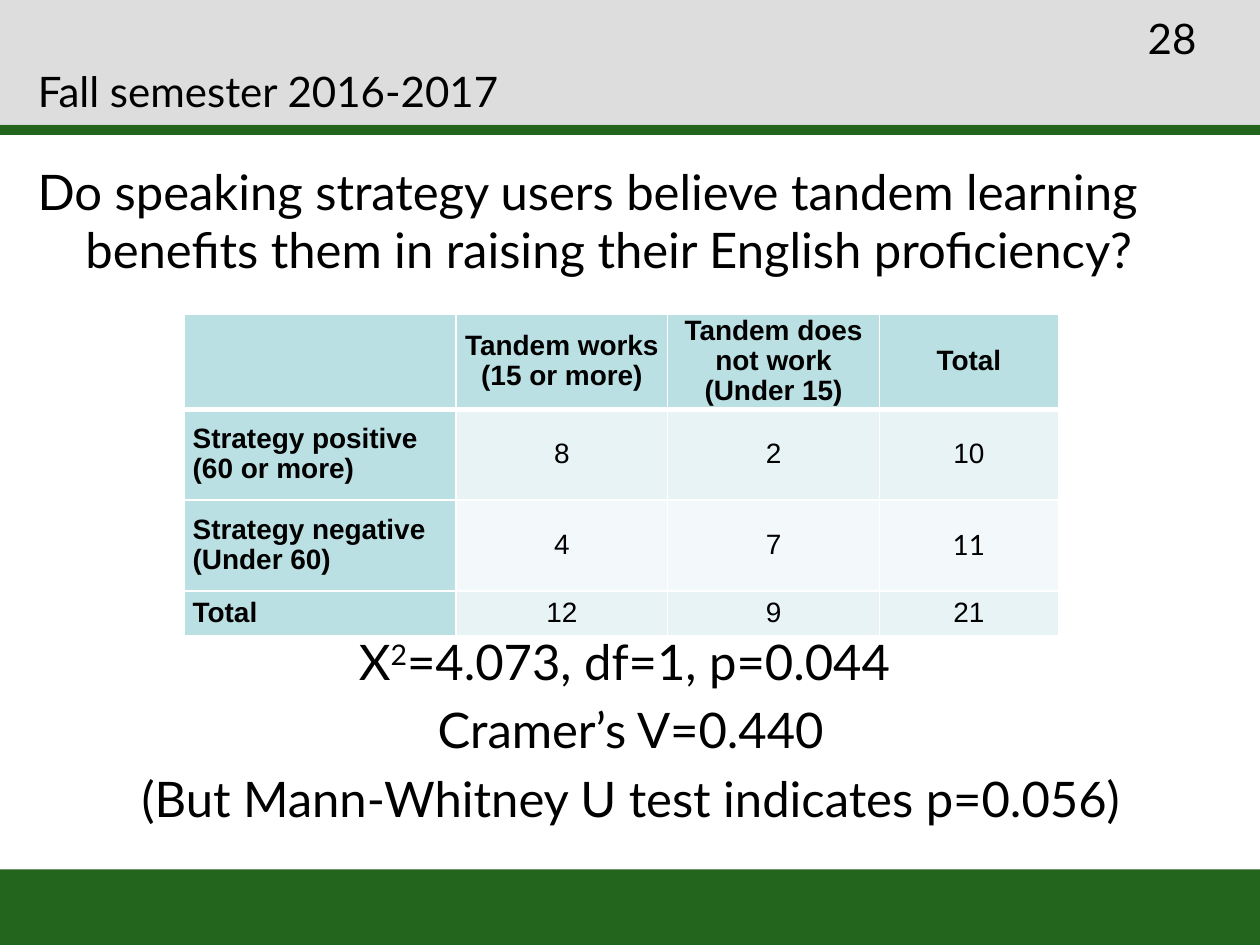
from lxml import etree
from pptx import Presentation
from pptx.dml.color import RGBColor
from pptx.enum import shapes, text
from pptx.oxml import ns
from pptx.util import Inches, Pt

GREEN = RGBColor(0x23, 0x65, 0x1C)
GREY = RGBColor(0xDD, 0xDD, 0xDD)
BLACK = RGBColor(0, 0, 0)
HEADING_FILL = RGBColor(0xBB, 0xE0, 0xE3)
ROW_FILLS = [RGBColor(0xE7, 0xF3, 0xF4), RGBColor(0xF3, 0xF9, 0xFA)]

COLUMN_WIDTHS = [2.16, 1.68, 1.68, 1.42]
ROW_HEIGHTS = [0.72, 0.72, 0.72, 0.36]
RESPONSES = [
    ["", "Tandem works\n(15 or more)", "Tandem does not work\n(Under 15)", "Total"],
    ["Strategy positive\n(60 or more)", "8", "2", "10"],
    ["Strategy negative\n(Under 60)", "4", "7", "11"],
    ["Total", "12", "9", "21"],
]


def style(para, size, name="Lato", bold=False):
    para.font.size = Pt(size)
    para.font.name = name
    para.font.bold = bold
    para.font.color.rgb = BLACK


def add_band(page, top, height, color):
    band = page.shapes.add_shape(
        shapes.MSO_SHAPE.RECTANGLE, 0, Inches(top), Inches(10), Inches(height))
    band.shadow.inherit = False
    band.fill.solid()
    band.fill.fore_color.rgb = color
    band.line.fill.background()


def set_title(page, words):
    title = page.shapes.title
    title.left, title.top = Inches(0.2), Inches(0.44)
    title.width, title.height = Inches(8.27), Inches(0.56)
    frame = title.text_frame
    frame.text = words
    frame.vertical_anchor = text.MSO_ANCHOR.MIDDLE
    frame.auto_size = text.MSO_AUTO_SIZE.NONE
    para = frame.paragraphs[0]
    para.alignment = text.PP_ALIGN.LEFT
    style(para, 24)
    title.element.getparent().append(title.element)


def add_text(page, left, top, width, height, lines, size, align=text.PP_ALIGN.LEFT):
    box = page.shapes.add_textbox(
        Inches(left), Inches(top), Inches(width), Inches(height))
    frame = box.text_frame
    frame.word_wrap = True
    for index, spans in enumerate(lines):
        para = frame.paragraphs[0] if index == 0 else frame.add_paragraph()
        para.alignment = align
        if index:
            para.space_before = Pt(size * 0.2)
        style(para, size)
        for words, raised in spans:
            span = para.add_run()
            span.text = words
            if raised:
                span.font._element.set("baseline", "30000")
    return frame


def hang(para, indent):
    properties = para._p.get_or_add_pPr()
    properties.set("marL", str(Inches(indent)))
    properties.set("indent", str(-Inches(indent)))


def set_borders(cell, top, bottom):
    properties = cell._tc.get_or_add_tcPr()
    for side, width in (("L", 1), ("R", 1), ("T", top), ("B", bottom)):
        line = etree.SubElement(properties, ns.qn(f"a:ln{side}"), w=str(Pt(width)))
        fill = etree.SubElement(line, ns.qn("a:solidFill"))
        etree.SubElement(fill, ns.qn("a:srgbClr"), val="FFFFFF")


def fill_cell(cell, words, row, column):
    heading = row == 0 or column == 0
    set_borders(cell, 3 if row == 1 else 1, 3 if row == 0 else 1)
    cell.fill.solid()
    cell.fill.fore_color.rgb = HEADING_FILL if heading else ROW_FILLS[(row - 1) % 2]
    cell.vertical_anchor = text.MSO_ANCHOR.MIDDLE
    cell.margin_left = cell.margin_right = Inches(0.07)
    cell.margin_top = cell.margin_bottom = 0
    cell.text_frame.text = words
    for para in cell.text_frame.paragraphs:
        para.alignment = text.PP_ALIGN.CENTER if column else text.PP_ALIGN.LEFT
        para.line_spacing = 0.95
        style(para, 16, "Lato" if words == "11" else "Arial", heading)


def add_response_table(page):
    table = page.shapes.add_table(
        len(ROW_HEIGHTS), len(COLUMN_WIDTHS), Inches(1.46), Inches(2.49),
        Inches(sum(COLUMN_WIDTHS)), Inches(sum(ROW_HEIGHTS))).table
    for column, width in zip(table.columns, COLUMN_WIDTHS):
        column.width = Inches(width)
    for row, height in zip(table.rows, ROW_HEIGHTS):
        row.height = Inches(height)
    for row, entries in enumerate(RESPONSES):
        for column, words in enumerate(entries):
            fill_cell(table.cell(row, column), words, row, column)


def main():
    deck = Presentation()
    deck.slide_width, deck.slide_height = Inches(10), Inches(7.5)
    page = deck.slides.add_slide(deck.slide_layouts[5])
    add_band(page, 6.9, 0.6, GREEN)
    add_band(page, 0, 0.99, GREY)
    add_band(page, 0.99, 0.08, GREEN)
    set_title(page, "Fall semester 2016-2017")

    question = ("Do speaking strategy users believe tandem learning "
                "benefits them in raising their English proficiency?")
    frame = add_text(page, 0.2, 1.23, 9.61, 1.1, [[(question, False)]], 28)
    hang(frame.paragraphs[0], 0.38)

    results = [
        [("Χ", False), ("2", True), ("=4.073, df=1, p=0.044 ", False)],
        [("Cramer’s V=0.440", False)],
        [("(But Mann-Whitney U test indicates p=0.056)", False)],
    ]
    add_text(page, 0.2, 4.96, 9.61, 1.7, results, 28, text.PP_ALIGN.CENTER)
    add_text(page, 9.01, 0.05, 0.88, 0.53, [[("28", False)]], 24)
    add_response_table(page)
    deck.save("out.pptx")


if __name__ == "__main__":
    main()
